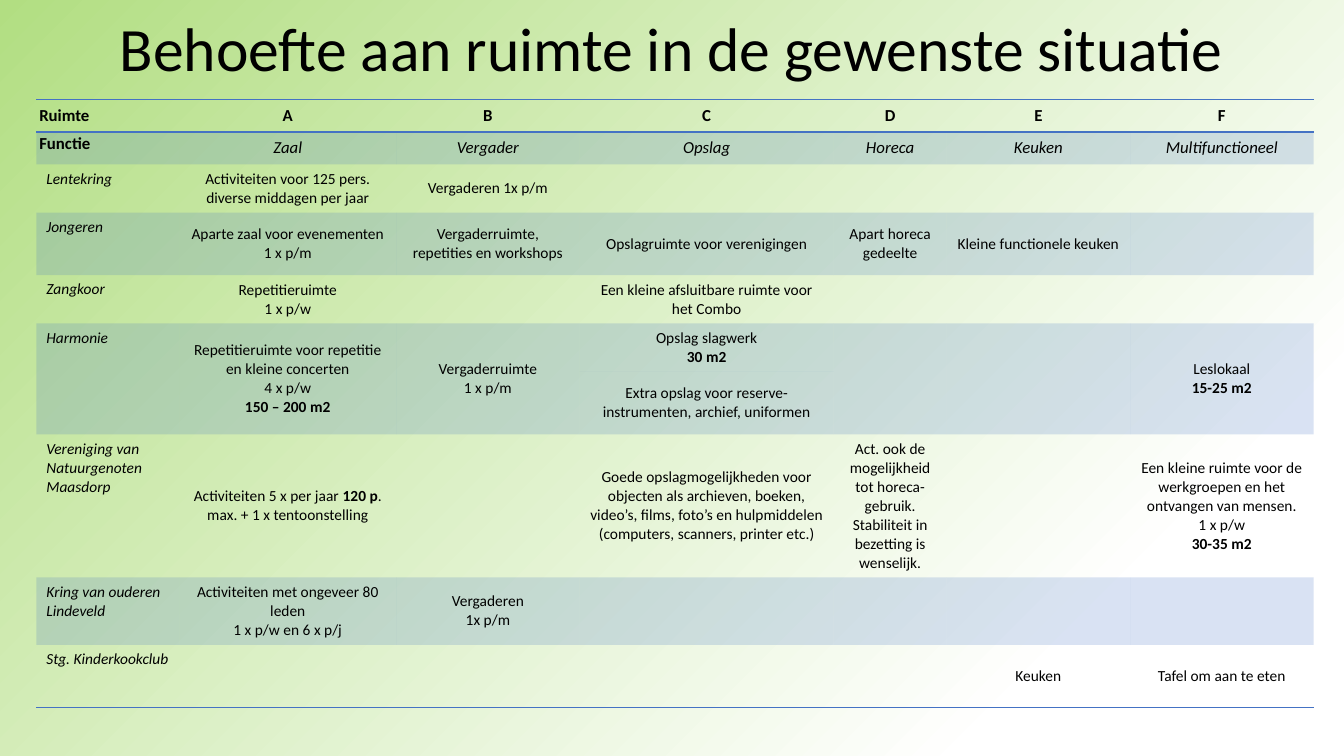
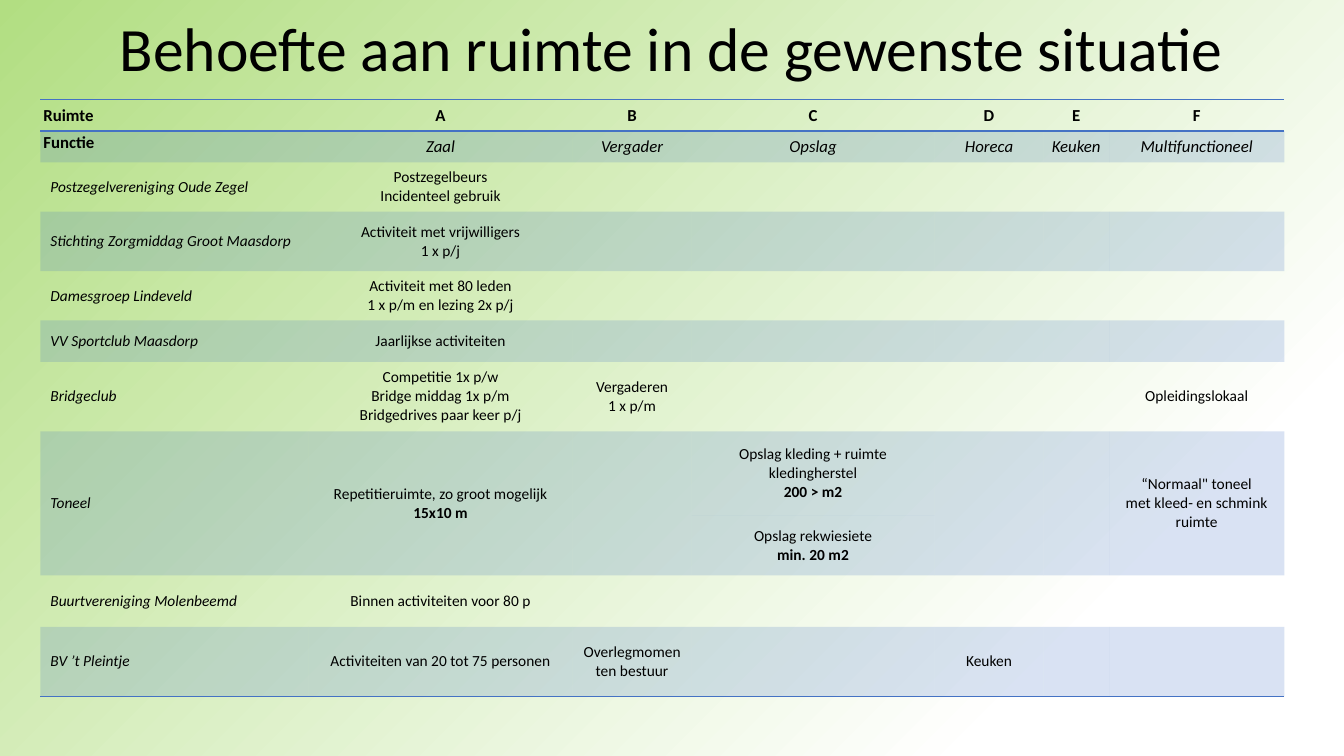
from lxml import etree
from pptx import Presentation, util as u
from pptx.dml.color import RGBColor
from pptx.enum import text
from pptx.oxml import parse_xml
from pptx.oxml.ns import qn

COLORS = {"ink": "000000", "accent": "4472C4"}
BACKDROP = [(0, "B2DE82"), (82, "FFFFFF"), (100, "FFFFFF"), (100, "CFCFCF")]
FONT = "Calibri"
TITLE = "Behoefte aan ruimte in de gewenste situatie"
PLAIN_STYLE = "{2D5ABB26-0587-4C30-8999-92F81FD0307C}"
DRAWING = 'xmlns:a="http://schemas.openxmlformats.org/drawingml/2006/main"'
WIDTH, HEIGHT = u.Inches(13.33), u.Inches(7.5)

ROOMS = ["Ruimte", "A", "B", "C", "D", "E", "F"]
FUNCTIONS = ["Functie", "Zaal", "Vergader", "Opslag", "Horeca", "Keuken", "Multifunctioneel"]

# Each row: height in inches, then its cells by column number.
# A line break starts a paragraph, asterisks enclose bold words,
# and a row without column 0 continues the group above it.
OVERVIEWS = [
    {
        "left": 0.027,
        "columns": [1.42, 2.15, 1.82, 2.52, 1.12, 1.82, 1.82],
        "header": 0.32,
        "label_anchor": text.MSO_ANCHOR.TOP,
        "rows": [
            (0.48, {0: "Lentekring",
                    1: "Activiteiten voor 125 pers. diverse middagen per jaar",
                    2: "Vergaderen 1x p/m"}),
            (0.62, {0: "Jongeren",
                    1: "Aparte zaal voor evenementen\n1 x p/m",
                    2: "Vergaderruimte, repetities en workshops",
                    3: "Opslagruimte voor verenigingen",
                    4: "Apart horeca gedeelte",
                    5: "Kleine functionele keuken"}),
            (0.48, {0: "Zangkoor",
                    1: "Repetitieruimte\n1 x p/w",
                    3: "Een kleine afsluitbare ruimte voor het Combo"}),
            (0.48, {0: "Harmonie",
                    1: "Repetitieruimte voor repetitie en kleine concerten\n4 x p/w\n*150 – 200 m2*",
                    2: "Vergaderruimte\n1 x p/m",
                    3: "Opslag slagwerk\n*30 m2*",
                    6: "Leslokaal\n*15-25 m2*"}),
            (0.62, {3: "Extra opslag voor reserve-instrumenten, archief, uniformen"}),
            (1.42, {0: "Vereniging van Natuurgenoten Maasdorp",
                    1: "Activiteiten 5 x per jaar *120 p*. max. + 1 x tentoonstelling",
                    3: "Goede opslagmogelijkheden voor objecten als archieven, boeken, "
                       "video’s, films, foto’s en hulpmiddelen (computers, scanners, printer etc.)",
                    4: "Act. ook de mogelijkheid tot horeca-gebruik. "
                       "Stabiliteit in bezetting is wenselijk.",
                    6: "Een kleine ruimte voor de werkgroepen en het ontvangen van mensen.\n"
                       "1 x p/w\n*30-35 m2*"}),
            (0.67, {0: "Kring van ouderen Lindeveld",
                    1: "Activiteiten met ongeveer 80 leden\n1 x p/w en 6 x p/j",
                    2: "Vergaderen\n1x p/m"}),
            (0.62, {0: "Stg. Kinderkookclub",
                    5: "Keuken",
                    6: "Tafel om aan te eten"}),
        ],
    },
    {
        "left": 0.03,
        "columns": [2.66, 2.62, 1.18, 2.41, 1.08, 0.65, 1.74],
        "header": 0.31,
        "label_anchor": text.MSO_ANCHOR.MIDDLE,
        "rows": [
            (0.49, {0: "Postzegelvereniging Oude Zegel",
                    1: "Postzegelbeurs\nIncidenteel gebruik"}),
            (0.59, {0: "Stichting Zorgmiddag Groot Maasdorp",
                    1: "Activiteit met vrijwilligers\n1 x p/j"}),
            (0.49, {0: "Damesgroep Lindeveld",
                    1: "Activiteit met 80 leden\n1 x p/m en lezing 2x p/j"}),
            (0.41, {0: "VV Sportclub Maasdorp",
                    1: "Jaarlijkse activiteiten"}),
            (0.69, {0: "Bridgeclub",
                    1: "Competitie 1x p/w\nBridge middag 1x p/m\nBridgedrives paar keer p/j",
                    2: "Vergaderen\n1 x p/m",
                    6: "Opleidingslokaal"}),
            (0.84, {0: "Toneel",
                    1: "Repetitieruimte, zo groot mogelijk\n*15x10 m*",
                    3: "Opslag kleding + ruimte kledingherstel\n*200 > m2*",
                    6: "“Normaal\" toneel\nmet kleed- en schmink ruimte"}),
            (0.59, {3: "Opslag rekwiesiete\n*min. 20 m2*"}),
            (0.51, {0: "Buurtvereniging Molenbeemd",
                    1: "Binnen activiteiten voor 80 p"}),
            (0.69, {0: "BV ’t Pleintje",
                    1: "Activiteiten van 20 tot 75 personen",
                    2: "Overlegmomenten bestuur",
                    4: "Keuken"}),
        ],
    },
]


def write(frame, words, size, align, bold=False, italic=False):
    """Fill a text frame; words between asterisks become bold."""
    for number, line in enumerate(words.split("\n")):
        paragraph = frame.paragraphs[0] if number == 0 else frame.add_paragraph()
        paragraph.alignment = align
        for part, piece in enumerate(line.split("*")):
            if piece:
                run = paragraph.add_run()
                run.text = piece
                run.font.name, run.font.size = FONT, u.Pt(size)
                run.font.bold, run.font.italic = bold or part % 2 == 1, italic
                run.font.color.rgb = RGBColor.from_string(COLORS["ink"])


def paint(cell, shaded, rules):
    """Give a cell its band and a thin line on each edge in rules (T, B)."""
    properties = cell._tc.get_or_add_tcPr()
    if shaded:
        cell.fill.solid()
        cell.fill.fore_color.rgb = RGBColor.from_string(COLORS["accent"])
        tint = properties.find(".//" + qn("a:srgbClr"))
        etree.SubElement(tint, qn("a:alpha")).set("val", "20000")
    else:
        cell.fill.background()
    for place, edge in enumerate(rules):
        properties.insert(place, parse_xml(
            f'<a:ln{edge} {DRAWING} w="12700"><a:solidFill>'
            f'<a:srgbClr val="{COLORS["accent"]}"/></a:solidFill></a:ln{edge}>'))


deck = Presentation()
deck.slide_width, deck.slide_height = WIDTH, HEIGHT

backdrop = deck.slide_master.background.fill
backdrop.gradient()
backdrop.gradient_angle = 315
stops = deck.slide_master.element.find(".//" + qn("p:bgPr")).find(".//" + qn("a:gsLst"))
for stop in list(stops):
    stops.remove(stop)
for share, color in BACKDROP:
    stops.append(parse_xml(
        f'<a:gs {DRAWING} pos="{share * 1000}"><a:srgbClr val="{color}"/></a:gs>'))

for overview in OVERVIEWS:
    slide = deck.slides.add_slide(deck.slide_layouts[6])
    title = slide.shapes.add_textbox(
        int(WIDTH * 0.07), int(HEIGHT * 0.005), int(WIDTH * 0.86), int(HEIGHT * 0.127)).text_frame
    title.word_wrap = True
    title.vertical_anchor = text.MSO_ANCHOR.MIDDLE
    write(title, TITLE, 44, text.PP_ALIGN.CENTER)
    title.paragraphs[0].line_spacing = 0.9

    header = [(overview["header"], dict(enumerate(names))) for names in (ROOMS, FUNCTIONS)]
    rows = header + overview["rows"]
    columns = overview["columns"]
    grid = slide.shapes.add_table(
        len(rows), len(columns), int(WIDTH * overview["left"]), int(HEIGHT * 0.132),
        u.Inches(sum(columns)), u.Inches(sum(height for height, _ in rows))).table
    grid.first_row = grid.horz_banding = False
    grid._tbl.tblPr.find(qn("a:tableStyleId")).text = PLAIN_STYLE
    for column, width in zip(grid.columns, columns):
        column.width = u.Inches(width)

    shaded = True
    for r, (height, entries) in enumerate(rows):
        grid.rows[r].height = u.Inches(height)
        if 0 in entries:
            shaded = not shaded
        rules = "TB" if r == 0 else "B" if r == len(rows) - 1 else ""
        for c in range(len(columns)):
            cell = grid.cell(r, c)
            paint(cell, shaded, rules)
            if 0 not in entries and c not in entries:
                grid.cell(r - 1, c).merge(cell)
                continue
            cell.vertical_anchor = text.MSO_ANCHOR.MIDDLE
            if c == 0 and r > 0:
                cell.vertical_anchor = text.MSO_ANCHOR.TOP if r == 1 else overview["label_anchor"]
            if c == len(columns) - 1:
                side = edge = 0
            else:
                side, edge = (0.03, 0.02) if r < 2 else (0.1, 0.05)
            cell.margin_left = cell.margin_right = u.Inches(side)
            cell.margin_top = cell.margin_bottom = u.Inches(edge)
            write(cell.text_frame, entries.get(c, ""), 12 if r < 2 else 11,
                  text.PP_ALIGN.LEFT if c == 0 else text.PP_ALIGN.CENTER,
                  bold=r == 0 or (r == 1 and c == 0),
                  italic=(r == 1 and c > 0) or (r > 1 and c == 0))

deck.save("out.pptx")
